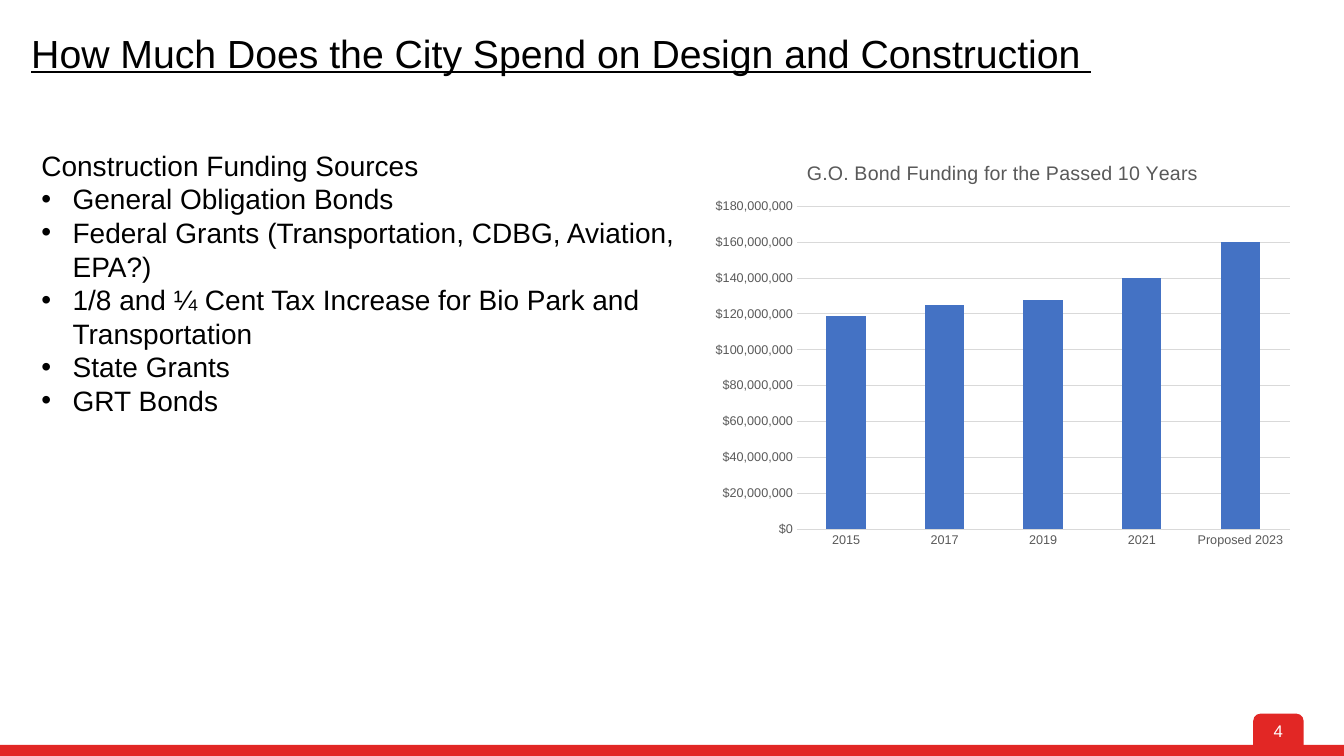
from dataclasses import dataclass

from lxml import etree
from pptx import Presentation
from pptx.chart.data import CategoryChartData
from pptx.dml.color import RGBColor
from pptx.enum.chart import XL_CHART_TYPE, XL_TICK_MARK
from pptx.enum.shapes import MSO_SHAPE
from pptx.enum.text import MSO_ANCHOR, MSO_AUTO_SIZE, PP_ALIGN
from pptx.oxml.ns import qn
from pptx.util import Pt

COLUMN_STACKED = XL_CHART_TYPE.COLUMN_STACKED
NO_TICK = XL_TICK_MARK.NONE
RECTANGLE = MSO_SHAPE.RECTANGLE
ROUND_TOP = MSO_SHAPE.ROUND_2_SAME_RECTANGLE
TOP, MIDDLE = MSO_ANCHOR.TOP, MSO_ANCHOR.MIDDLE
NO_AUTOFIT = MSO_AUTO_SIZE.NONE
LEFT, CENTER = PP_ALIGN.LEFT, PP_ALIGN.CENTER

EMU_PER_PX = 9144
SLIDE_WIDTH, SLIDE_HEIGHT = 1333, 750
BULLET_INDENT = 31


@dataclass(frozen=True)
class Theme:
    font: str = "Arial"
    text: str = "000000"
    inverse: str = "FFFFFF"
    accent: str = "E22725"
    column: str = "4472C4"
    chart_text: str = "595959"
    grid: str = "D9D9D9"
    title_size: int = 28
    body_size: int = 20
    chart_title_size: int = 14
    number_size: int = 12
    axis_size: int = 9


THEME = Theme()
TITLE = "How Much Does the City Spend on Design and Construction "
FUNDING_HEADING = "Construction Funding Sources"
FUNDING_SOURCES = [
    "General Obligation Bonds",
    "Federal Grants (Transportation, CDBG, Aviation, EPA?)",
    "1/8 and ¼ Cent Tax Increase for Bio Park and Transportation",
    "State Grants",
    "GRT Bonds",
]
BOND_TITLE = "G.O. Bond Funding for the Passed 10 Years"
BOND_FUNDING = {
    "2015": 119_000_000,
    "2017": 125_000_000,
    "2019": 128_000_000,
    "2021": 140_000_000,
    "Proposed 2023": 160_000_000,
}


def px(length):
    return length * EMU_PER_PX


def style_font(font, size, color):
    font.name = THEME.font
    font.size = Pt(size)
    font.bold = False
    font.color.rgb = RGBColor.from_string(color)


def add_run(paragraph, text, size, color):
    run = paragraph.add_run()
    run.text = text
    style_font(run.font, size, color)
    return run


def place(shape, left, top, width, height):
    shape.left, shape.top = px(left), px(top)
    shape.width, shape.height = px(width), px(height)


def prepare_frame(frame, anchor):
    frame.word_wrap = True
    frame.auto_size = NO_AUTOFIT
    frame.vertical_anchor = anchor


def fill_title(shape, text):
    place(shape, 31, 34, 1256, 48)
    frame = shape.text_frame
    prepare_frame(frame, TOP)
    frame.margin_left = frame.margin_right = 0
    frame.margin_top = frame.margin_bottom = 0
    paragraph = frame.paragraphs[0]
    paragraph.alignment = LEFT
    paragraph.line_spacing = 0.9
    run = add_run(paragraph, text, THEME.title_size, THEME.text)
    run.font.underline = True


def set_bullet(paragraph, character):
    properties = paragraph._p.get_or_add_pPr()
    indent = px(BULLET_INDENT) if character else 0
    properties.set("marL", str(indent))
    properties.set("indent", str(-indent))
    if character:
        etree.SubElement(properties, qn("a:buFont"), typeface=THEME.font)
        etree.SubElement(properties, qn("a:buChar"), char=character)
    else:
        etree.SubElement(properties, qn("a:buNone"))


def fill_list(shape, heading, items):
    place(shape, 31, 142, 667, 279)
    frame = shape.text_frame
    prepare_frame(frame, TOP)
    for index, text in enumerate([heading, *items]):
        paragraph = frame.add_paragraph() if index else frame.paragraphs[0]
        set_bullet(paragraph, "•" if index else None)
        paragraph.space_before = Pt(0)
        paragraph.line_spacing = 1.0
        add_run(paragraph, text, THEME.body_size, THEME.text)


def add_accent(slide, preset, left, top, width, height):
    shape = slide.shapes.add_shape(preset, px(left), px(top), px(width), px(height))
    shape.shadow.inherit = False
    shape.fill.solid()
    shape.fill.fore_color.rgb = RGBColor.from_string(THEME.accent)
    shape.line.fill.background()
    return shape


def add_footer(slide, number):
    tab = add_accent(slide, ROUND_TOP, 1243, 708, 50, 31)
    tab.adjustments[0] = 0.23
    prepare_frame(tab.text_frame, MIDDLE)
    paragraph = tab.text_frame.paragraphs[0]
    paragraph.alignment = CENTER
    add_run(paragraph, number, THEME.number_size, THEME.inverse)
    add_accent(slide, RECTANGLE, 0, 739, SLIDE_WIDTH, 11)


def style_line(line):
    line.color.rgb = RGBColor.from_string(THEME.grid)
    line.width = Pt(0.75)


def style_axis(axis):
    axis.major_tick_mark = axis.minor_tick_mark = NO_TICK
    style_font(axis.tick_labels.font, THEME.axis_size, THEME.chart_text)


def add_bond_chart(slide, title, funding):
    data = CategoryChartData()
    data.categories = list(funding)
    data.add_series("Series 1", list(funding.values()))
    chart = slide.shapes.add_chart(
        COLUMN_STACKED, px(698), px(142), px(593), px(410), data
    ).chart
    style_font(chart.font, THEME.axis_size, THEME.chart_text)
    chart.has_legend = False
    chart.has_title = True
    add_run(chart.chart_title.text_frame.paragraphs[0], title,
            THEME.chart_title_size, THEME.chart_text)

    style_axis(chart.category_axis)
    style_line(chart.category_axis.format.line)
    value_axis = chart.value_axis
    style_axis(value_axis)
    value_axis.format.line.fill.background()
    style_line(value_axis.major_gridlines.format.line)
    value_axis.minimum_scale = 0
    value_axis.maximum_scale = 180_000_000
    value_axis.major_unit = 20_000_000
    value_axis.tick_labels.number_format = '"$"#,##0'
    value_axis.tick_labels.number_format_is_linked = False

    plot = chart.plots[0]
    plot.gap_width = 150
    plot.overlap = 100
    plot.vary_by_categories = False
    columns = plot.series[0].format.fill
    columns.solid()
    columns.fore_color.rgb = RGBColor.from_string(THEME.column)


def main():
    presentation = Presentation()
    presentation.slide_width = px(SLIDE_WIDTH)
    presentation.slide_height = px(SLIDE_HEIGHT)
    slide = presentation.slides.add_slide(presentation.slide_layouts[1])
    fill_title(slide.shapes.title, TITLE)
    fill_list(slide.placeholders[1], FUNDING_HEADING, FUNDING_SOURCES)
    add_bond_chart(slide, BOND_TITLE, BOND_FUNDING)
    add_footer(slide, "4")
    presentation.save("out.pptx")


if __name__ == "__main__":
    main()
